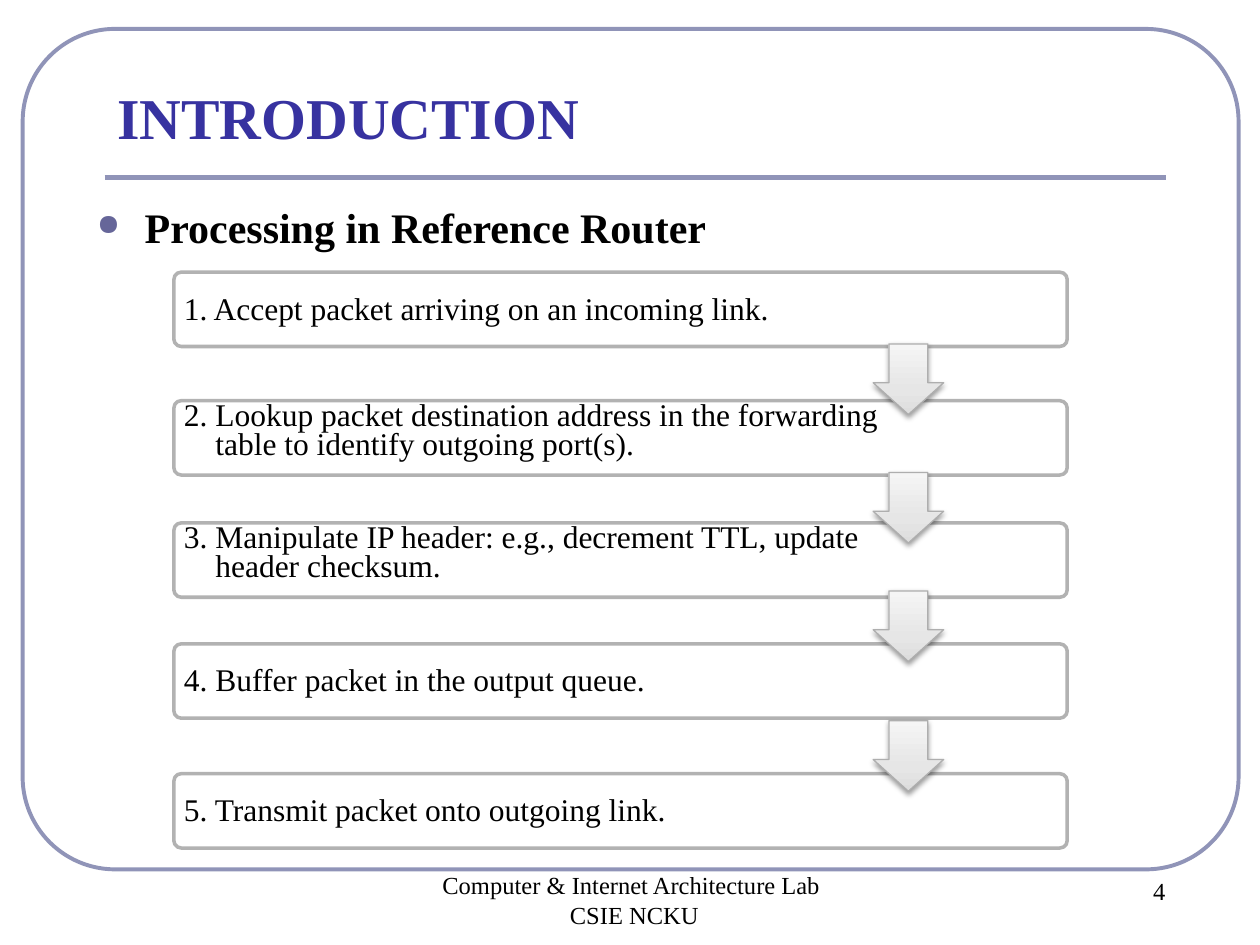
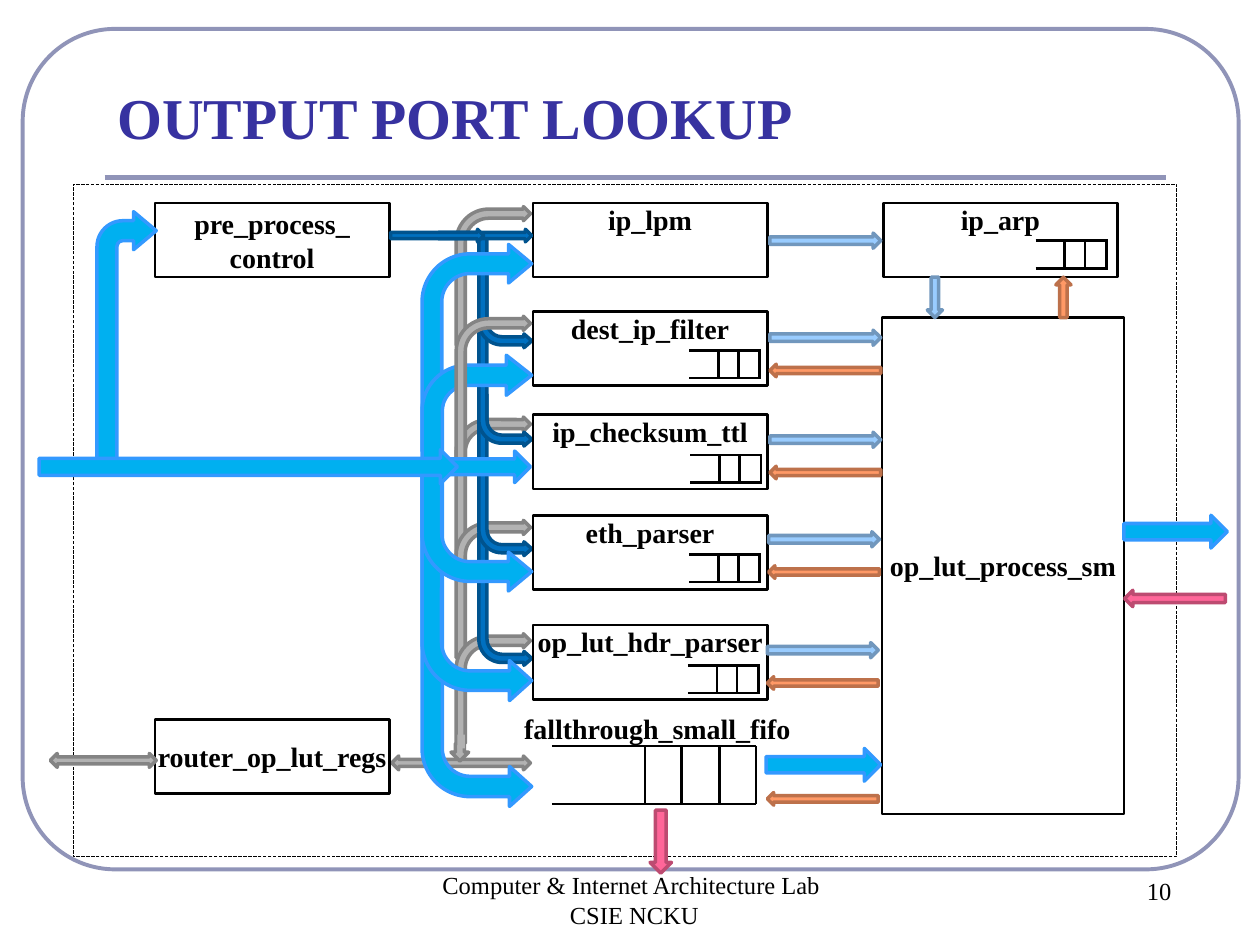
import pptx
import pptx.dml.color
import pptx.enum.dml
import pptx.enum.shapes
import pptx.enum.text
import pptx.oxml
import pptx.oxml.ns
import pptx.util

Inches = pptx.util.Inches
Pt = pptx.util.Pt
ALIGN = pptx.enum.text.PP_ALIGN
ANCHOR = pptx.enum.text.MSO_ANCHOR
FONT = "Times New Roman"
BLACK, WHITE = "000000", "FFFFFF"
FRAME, TITLE, STEEL = "9094B8", "3732A0", "B2B2B2"
NS = pptx.oxml.ns.nsdecls("a")
hue = pptx.dml.color.RGBColor.from_string


def put(page, kind, box, fill=None, line=None, width=2, adj=(), rot=0, flip=False):
    spots = [Inches(v) for v in box]
    if kind == "LINE":
        item = page.shapes.add_connector(pptx.enum.shapes.MSO_CONNECTOR.STRAIGHT, *spots)
    else:
        item = page.shapes.add_shape(pptx.enum.shapes.MSO_SHAPE[kind], *spots)
        item.shadow.inherit = False
        item.rotation = rot
        for i, part in enumerate(adj):
            item.adjustments[i] = part
        if flip:
            item.element.spPr.find(pptx.oxml.ns.qn("a:xfrm")).set("flipH", "1")
        if fill:
            item.fill.solid()
            item.fill.fore_color.rgb = hue(fill)
        else:
            item.fill.background()
    if line:
        item.line.color.rgb = hue(line)
        item.line.width = Pt(width)
    else:
        item.line.fill.background()
    if kind == "LINE":
        item.element.spPr.append(pptx.oxml.parse_xml(f"<a:effectLst {NS}/>"))
    return item


def write(item, lines, size, bold=False, color=BLACK, align=ALIGN.LEFT,
          anchor=ANCHOR.TOP, inset=None):
    frame = item.text_frame
    frame.word_wrap = True
    frame.auto_size = pptx.enum.text.MSO_AUTO_SIZE.NONE
    frame.vertical_anchor = anchor
    if inset is not None:
        frame.margin_left = frame.margin_right = Inches(inset)
        frame.margin_top = frame.margin_bottom = Inches(inset)
    for i, text in enumerate(lines):
        para = frame.add_paragraph() if i else frame.paragraphs[0]
        para.alignment = align
        run = para.add_run()
        run.text = text
        run.font.name = FONT
        run.font.size = Pt(size)
        run.font.bold = bold
        run.font.color.rgb = hue(color)
    return frame.paragraphs


deck = pptx.Presentation()
deck.slide_width = Inches(10)
deck.slide_height = Inches(7.5)

pages = []
for name, count in [("INTRODUCTION", "4"), ("OUTPUT PORT LOOKUP", "10")]:
    page = deck.slides.add_slide(deck.slide_layouts[5])
    pages.append(page)
    put(page, "ROUNDED_RECTANGLE", (0.18, 0.23, 9.65, 6.67), None, FRAME, 2.25, [0.11])
    put(page, "LINE", (0.83, 1.41, 9.25, 1.41), None, FRAME, 3)
    title = page.shapes.title
    title.left, title.top = Inches(0.83), Inches(0.6)
    title.width, title.height = Inches(8.42), Inches(0.65)
    write(title, [name], 33, True, TITLE, anchor=ANCHOR.BOTTOM)
    lab = ["Computer & Internet Architecture Lab ", "CSIE NCKU"]
    for box, lines in [((2.87, 6.86, 4.33, 0.5), lab), ((8.66, 6.9, 1.08, 0.5), [count])]:
        foot = page.shapes.add_textbox(*[Inches(v) for v in box])
        write(foot, lines, 14, align=ALIGN.CENTER)

intro, lookup = pages

head = intro.shapes.add_textbox(Inches(0.67), Inches(1.55), Inches(9.05), Inches(0.6))
para = write(head, ["Processing in Reference Router"], 24, True)[0]
para.space_before = Pt(4.8)
props = para._p.get_or_add_pPr()
props.set("marL", str(Inches(0.38)))
props.set("indent", str(-Inches(0.38)))
for tag in ('<a:buClr {}><a:srgbClr val="666699"/></a:buClr>',
            '<a:buSzPct {} val="70000"/>', '<a:buChar {} char="●"/>'):
    props.append(pptx.oxml.parse_xml(tag.format(NS)))

steps = [
    (2.16, ["1. Accept packet arriving on an incoming link."]),
    (3.18, ["2. Lookup packet destination address in the forwarding",
            "table to identify outgoing port(s)."]),
    (4.15, ["3. Manipulate IP header: e.g., decrement TTL, update",
            "header checksum."]),
    (5.11, ["4. Buffer packet in the output queue."]),
    (6.14, ["5. Transmit packet onto outgoing link."]),
]
for top, lines in steps:
    put(intro, "ROUNDED_RECTANGLE", (1.38, top, 7.09, 0.59), WHITE, STEEL, 2, [0.1])
    label = intro.shapes.add_textbox(Inches(1.39), Inches(top + 0.02), Inches(5.84), Inches(0.56))
    paras = write(label, lines, 18, anchor=ANCHOR.MIDDLE, inset=0.07)
    for i, para in enumerate(paras):
        para.line_spacing = Pt(10) if len(lines) > 1 else 0.9
        para.space_after = Pt(6.3)
        if i:
            para._p.get_or_add_pPr().set("marL", str(Inches(0.25)))

stops = "".join(f'<a:gs pos="{at}000"><a:srgbClr val="{tint}"/></a:gs>'
                for at, tint in [(0, "DDDDDD"), (35, "E6E6E6"), (100, "F5F5F5")])
fade = f'<a:gradFill {NS}><a:gsLst>{stops}</a:gsLst><a:lin ang="16200000" scaled="0"/></a:gradFill>'
shade = (f'<a:outerShdw {NS} blurRad="{Pt(3.1)}" dist="{Pt(1.6)}" dir="5400000" rotWithShape="0">'
         f'<a:srgbClr val="{BLACK}"><a:alpha val="38000"/></a:srgbClr></a:outerShdw>')
for top in (2.73, 3.75, 4.69, 5.72):
    arrow = put(intro, "DOWN_ARROW", (6.93, top, 0.56, 0.56), WHITE, "AEAEAE", 0.75, [0.55, 0.45])
    shell = arrow.element.spPr
    solid = shell.find(pptx.oxml.ns.qn("a:solidFill"))
    shell.replace(solid, pptx.oxml.parse_xml(fade))
    shell.find(pptx.oxml.ns.qn("a:effectLst")).append(pptx.oxml.parse_xml(shade))

GRAY = (STEEL, "848484")
NAVY = ("0070C0", "00538E")
CYAN = ("00B0F0", "3399FF")
PALE = ("99CCFF", "7197BD")
RUST = ("FF9966", "BD714B")
PINK = ("FF6699", "BD4B71")
thin = (0.123, 0.095, 0.095, 0.438)
slim = (0.154, 0.131, 0.148, 0.438)

edge = put(lookup, "RECTANGLE", (0.58, 1.46, 8.76, 5.34), None, BLACK, 0.25)
edge.line.dash_style = pptx.enum.dml.MSO_LINE.LONG_DASH
for top, high in [(1.64, 1.1), (3.31, 1.09), (4.13, 1.09), (5.03, 0.87)]:
    put(lookup, "BENT_ARROW", (3.62, top, 0.59, high), *GRAY, adj=thin)
for top, high in [(4.23, 1.05), (3.13, 1.28), (2.14, 1.4), (1.87, 0.89)]:
    put(lookup, "BENT_ARROW", (3.8, top, 0.42, high), *NAVY, adj=slim, rot=180, flip=True)
put(lookup, "LEFT_RIGHT_ARROW", (3.11, 6, 1.1, 0.11), *GRAY)

high, mid = ANCHOR.TOP, ANCHOR.MIDDLE
blocks = [
    (4.23, 1.61, 1.86, 0.59, high, ["ip_lpm"]),
    (7.01, 1.61, 1.86, 0.59, high, ["ip_arp"]),
    (4.23, 2.47, 1.86, 0.59, high, ["dest_ip_filter"]),
    (4.23, 3.29, 1.86, 0.59, high, ["ip_checksum_ttl"]),
    (4.23, 4.96, 1.86, 0.59, high, ["op_lut_hdr_parser"]),
    (4.23, 4.09, 1.86, 0.59, high, ["eth_parser"]),
    (1.23, 1.61, 1.86, 0.59, mid, ["pre_process_", "control"]),
    (7, 2.52, 1.92, 3.94, mid, ["op_lut_process_sm"]),
    (1.23, 5.71, 1.86, 0.59, mid, ["router_op_lut_regs"]),
]
for *box, anchor, lines in blocks:
    block = put(lookup, "RECTANGLE", box, WHITE, BLACK, 1.5)
    write(block, lines, 16, True, align=ALIGN.CENTER, anchor=anchor, inset=0)

put(lookup, "BENT_ARROW", (0.77, 1.68, 0.47, 2.01), *CYAN, adj=(0.336, 0.321, 0.382, 0.438))
for left in (3.48, 3.1):
    put(lookup, "RIGHT_ARROW", (left, 1.82, 0.74, 0.1), *NAVY)
bends = [
    (1.94, 1.64, (0.18, 0.176, 0.211, 0.438), False),
    (2.82, 0.83, (0.194, 0.191, 0.242, 0.438), False),
    (3.7, 2.7, (0.185, 0.182, 0.202, 0.438), True),
    (3.7, 1.86, (0.178, 0.182, 0.202, 0.438), True),
    (3.7, 0.99, (0.18, 0.177, 0.212, 0.438), True),
]
for top, tall, adj, down in bends:
    put(lookup, "BENT_ARROW", (3.35, top, 0.87, tall), *CYAN, adj=adj, rot=180 * down, flip=down)

put(lookup, "LEFT_RIGHT_ARROW", (0.4, 5.98, 0.84, 0.11), *GRAY)
put(lookup, "LEFT_ARROW", (3.58, 5.9, 0.14, 0.14), *GRAY, rot=270)
put(lookup, "BENT_ARROW", (3.62, 2.51, 0.59, 1.19), *GRAY, adj=thin)
put(lookup, "RECTANGLE", (3.63, 5.83, 0.06, 0.11), STEEL)

flows = [
    ("RIGHT_ARROW", (3.45, 3.58, 0.76, 0.25), CYAN, 0),
    ("RIGHT_ARROW", (0.31, 3.57, 3.32, 0.27), CYAN, 0),
    ("RIGHT_ARROW", (6.08, 5.94, 0.91, 0.26), CYAN, 0),
    ("RIGHT_ARROW", (8.28, 2.3, 0.32, 0.12), RUST, 270),
    ("RIGHT_ARROW", (6.11, 1.85, 0.88, 0.12), PALE, 0),
    ("RIGHT_ARROW", (7.26, 2.3, 0.32, 0.12), PALE, 90),
    ("DOWN_ARROW", (5.16, 6.43, 0.17, 0.5), PINK, 0),
    ("RIGHT_ARROW", (8.92, 4.09, 0.82, 0.26), CYAN, 0),
    ("DOWN_ARROW", (9.26, 4.35, 0.13, 0.8), PINK, 90),
    ("RIGHT_ARROW", (6.09, 6.29, 0.88, 0.1), RUST, 180),
]
for left, top in [(6.11, 2.62), (6.11, 3.43), (6.1, 4.22), (6.09, 5.1)]:
    flows.append(("RIGHT_ARROW", (left, top, 0.88, 0.12), PALE, 0))
    flows.append(("RIGHT_ARROW", (left, top + 0.27, 0.88, 0.1), RUST, 180))
for kind, box, tone, rot in flows:
    put(lookup, kind, box, *tone, rot=rot)

fifo = lookup.shapes.add_textbox(Inches(4.16), Inches(5.75), Inches(2.85), Inches(0.17))
write(fifo, ["fallthrough_small_fifo"], 16, True, inset=0)[0].line_spacing = Pt(12)

small = (0.57, 0.22, (0.23, 0.39, 0.56))
queues = [(4.38, 5.92, 1.62, 0.46, (0.74, 1.03, 1.33, 1.62))]
for left, top in [(8.22, 1.91), (5.47, 2.78), (5.48, 3.61), (5.47, 4.4), (5.46, 5.28)]:
    queues.append((left, top, *small))
for left, top, wide, tall, bars in queues:
    for y in (top, top + tall):
        put(lookup, "LINE", (left, y, left + wide, y), None, BLACK, 1.5)
    for bar in bars:
        put(lookup, "LINE", (left + bar, top, left + bar, top + tall), None, BLACK, 1.5)

deck.save("out.pptx")
